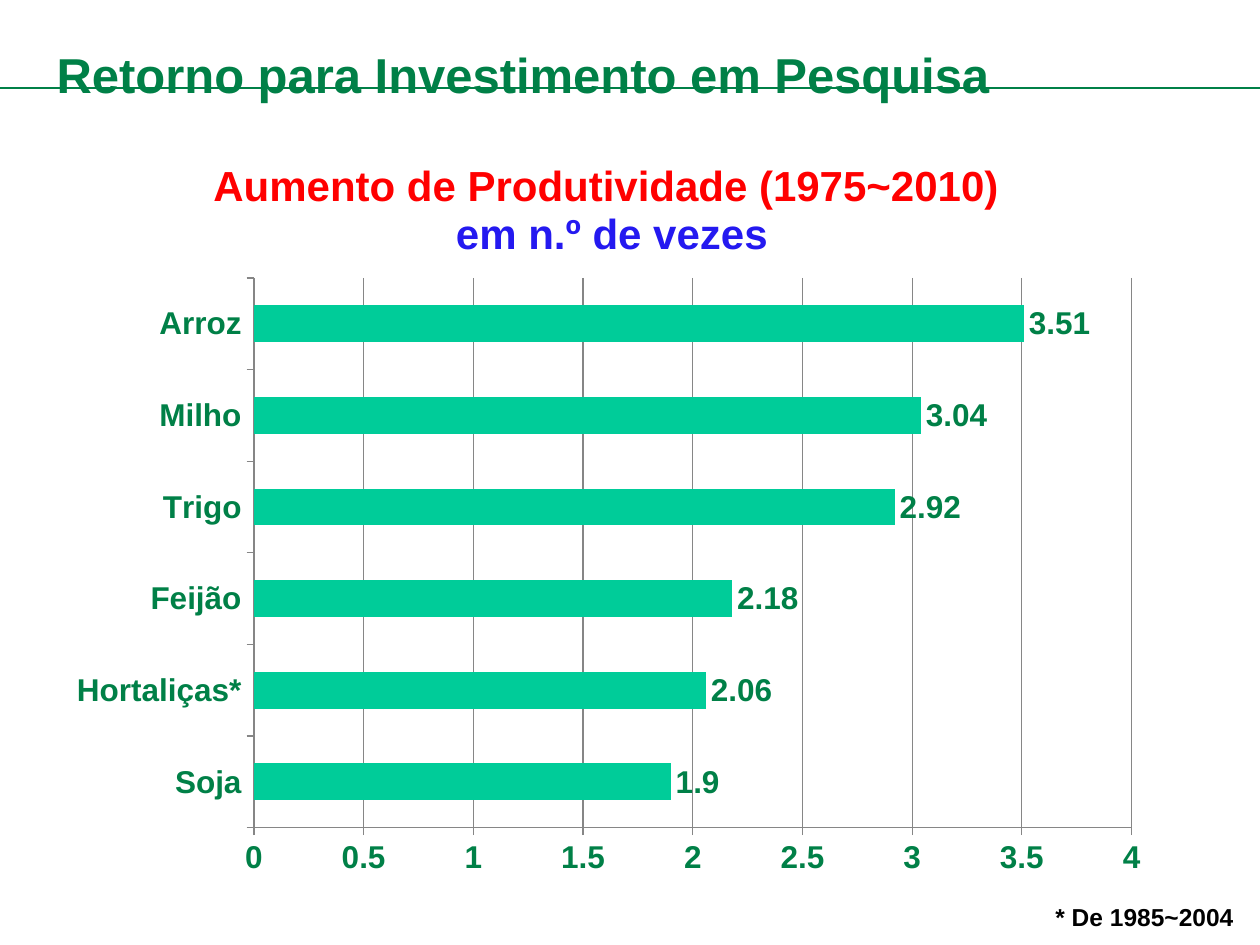
import pptx
import pptx.util
import pptx.dml.color
import pptx.chart.data
import pptx.enum.chart
import pptx.enum.shapes
import pptx.enum.text
import pptx.oxml
import pptx.oxml.ns

SCALE = 914400 / 126  # EMU in one px
COLORS = {"green": "008047", "bar": "00CC99", "red": "FF0000",
          "blue": "2419F0", "grid": "868686", "black": "000000"}
YIELDS = {"Soja": 1.9, "Hortaliças*": 2.06, "Feijão": 2.18,
          "Trigo": 2.92, "Milho": 3.04, "Arroz": 3.51}
enum = pptx.enum


def emu(*sizes):
    return [pptx.util.Emu(round(size * SCALE)) for size in sizes]


def rgb(name):
    return pptx.dml.color.RGBColor.from_string(COLORS[name])


def style(font, size, color):
    form = {"name": "Arial", "size": pptx.util.Pt(size), "bold": True}
    for key, value in form.items():
        setattr(font, key, value)
    font.color.rgb = rgb(color)


def stroke(line, color, width):
    line.color.rgb = rgb(color)
    line.width = pptx.util.Pt(width)


def layout(part, after, inner=False, **spots):
    """Fix a chart part at fractions of the chart's box."""
    tags = ['<c:layoutTarget val="inner"/>'] if inner else []
    tags += [f'<c:{key}Mode val="edge"/>' for key in "xy"]
    tags += [f'<c:{key} val="{value}"/>' for key, value in spots.items()]
    node = pptx.oxml.parse_xml(
        f'<c:layout {pptx.oxml.ns.nsdecls("c")}><c:manualLayout>'
        f'{"".join(tags)}</c:manualLayout></c:layout>')
    for old in part.findall(pptx.oxml.ns.qn("c:layout")):
        part.remove(old)
    if after is None:
        part.insert(0, node)
    else:
        after.addnext(node)


def add_bars(slide, box):
    data = pptx.chart.data.CategoryChartData()
    data.categories = list(YIELDS)
    data.add_series("Series 1", list(YIELDS.values()))
    chart = slide.shapes.add_chart(
        enum.chart.XL_CHART_TYPE.BAR_CLUSTERED, *emu(*box), data).chart
    chart.has_legend = False
    style(chart.font, 18, "green")

    # Two-line title
    chart.has_title = True
    title = chart.chart_title
    title.include_in_layout = False
    frame = title.text_frame
    lines = [("Aumento de Produtividade (1975~2010) ", "red"),
             ("em n.º de vezes", "blue")]
    for index, (text, color) in enumerate(lines):
        para = frame.add_paragraph() if index else frame.paragraphs[0]
        run = para.add_run()
        run.text = text
        style(run.font, 24, color)
    layout(title._element, title._element.find(pptx.oxml.ns.qn("c:tx")),
           x=0.14, y=0.03)

    # Bars and values
    plot = chart.plots[0]
    plot.gap_width = 150
    plot.vary_by_categories = False
    fill = plot.series[0].format.fill
    fill.solid()
    fill.fore_color.rgb = rgb("bar")
    plot.has_data_labels = True
    labels = plot.data_labels
    labels.show_value = True
    labels.position = enum.chart.XL_LABEL_POSITION.OUTSIDE_END
    style(labels.font, 18, "green")

    # Axes
    scale = chart.value_axis
    for key, value in {"minimum_scale": 0, "maximum_scale": 4,
                       "major_unit": 0.5, "has_major_gridlines": True}.items():
        setattr(scale, key, value)
    stroke(scale.major_gridlines.format.line, "grid", 0.75)
    for axis in (scale, chart.category_axis):
        axis.major_tick_mark = enum.chart.XL_TICK_MARK.OUTSIDE
        stroke(axis.format.line, "grid", 0.75)
        style(axis.tick_labels.font, 18, "green")
    layout(chart._chartSpace.chart.plotArea, None, inner=True,
           x=0.18, y=0.19, w=0.79, h=0.73)


def add_note(slide, box):
    frame = slide.shapes.add_textbox(*emu(*box)).text_frame
    frame.word_wrap = False
    frame.auto_size = enum.text.MSO_AUTO_SIZE.SHAPE_TO_FIT_TEXT
    frame.text = "* De 1985~2004"
    style(frame.paragraphs[0].font, 14, "black")


def add_rule(slide, box):
    left, top, width = box
    rule = slide.shapes.add_connector(
        enum.shapes.MSO_CONNECTOR.STRAIGHT, *emu(left, top, left + width, top))
    stroke(rule.line, "green", 1)
    rule._element.spPr.append(pptx.oxml.parse_xml(
        f'<a:effectLst {pptx.oxml.ns.nsdecls("a")}/>'))


def set_title(slide, box):
    title = slide.shapes.title
    for key, value in zip(("left", "top", "width", "height"), emu(*box)):
        setattr(title, key, value)
    frame = title.text_frame
    frame.text = "Retorno para Investimento em Pesquisa"
    for key, value in {"word_wrap": True,
                       "auto_size": enum.text.MSO_AUTO_SIZE.NONE,
                       "vertical_anchor": enum.text.MSO_ANCHOR.MIDDLE}.items():
        setattr(frame, key, value)
    para = frame.paragraphs[0]
    para.alignment = enum.text.PP_ALIGN.LEFT
    style(para.font, 28, "green")
    # Bring the title in front of the rule
    slide.shapes._spTree.append(title._element)


def main():
    deck = pptx.Presentation()
    deck.slide_width, deck.slide_height = emu(1260, 945)
    slide = deck.slides.add_slide(deck.slide_layouts[5])
    add_bars(slide, (54, 135, 1111, 753))
    add_note(slide, (1043, 896, 212, 43))
    add_rule(slide, (0, 88, 1260))
    set_title(slide, (44, 35, 1216, 78))
    deck.save("out.pptx")


if __name__ == "__main__":
    main()
